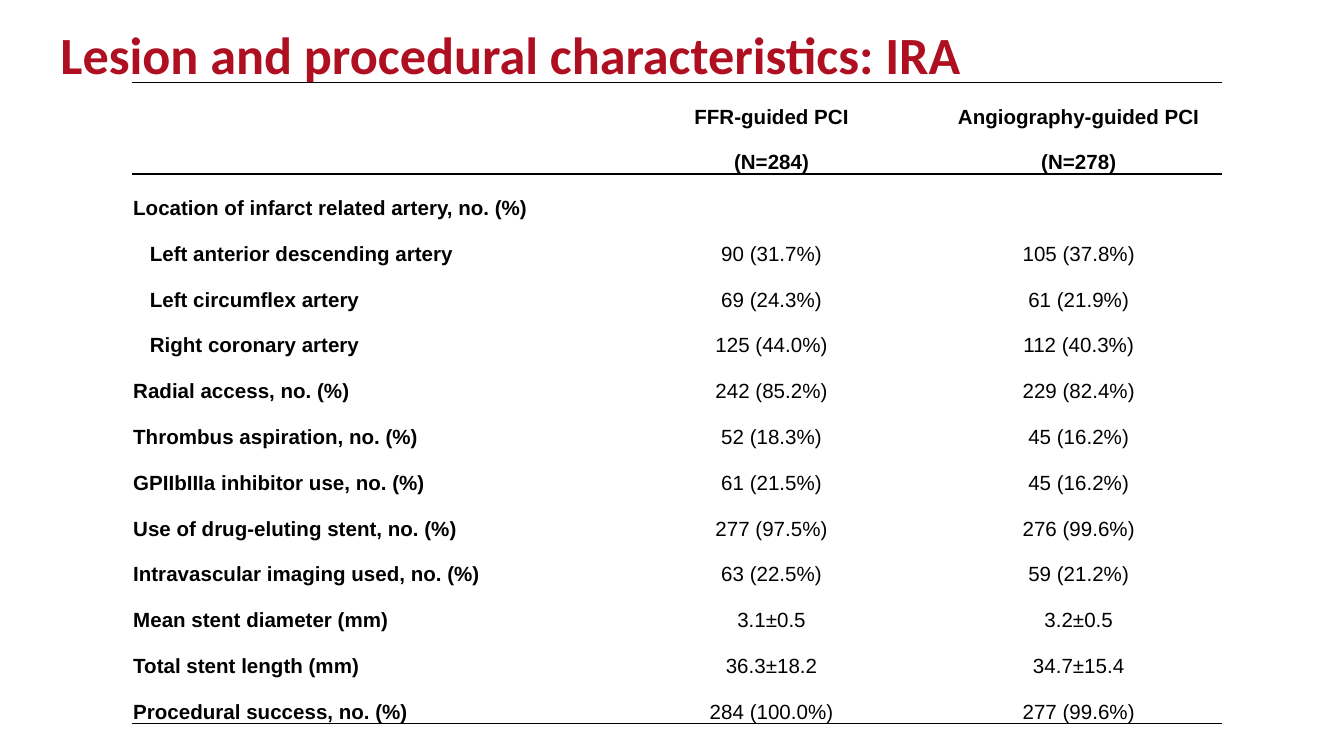
import dataclasses

import lxml.etree
import pptx
import pptx.dml.color
import pptx.enum.text
import pptx.oxml.ns
import pptx.util

Pt = pptx.util.Pt
ALIGN = pptx.enum.text.PP_ALIGN
ANCHOR = pptx.enum.text.MSO_ANCHOR


@dataclasses.dataclass(frozen=True)
class Theme:
    title_font: str = "Calibri"
    table_font: str = "Arial"
    title_size: float = 28
    table_size: float = 11
    title_color: str = "AE1022"
    text_color: str = "000000"
    rule_color: str = "000000"
    rule_width: float = 1


HEADER = ["", "FFR-guided PCI\n(N=284)", "Angiography-guided PCI\n(N=278)"]
ROWS = [
    ["Location of infarct related artery, no. (%)", "", ""],
    ["Left anterior descending artery", "90 (31.7%)", "105 (37.8%)"],
    ["Left circumflex artery", "69 (24.3%)", "61 (21.9%)"],
    ["Right coronary artery", "125 (44.0%)", "112 (40.3%)"],
    ["Radial access, no. (%)", "242 (85.2%)", "229 (82.4%)"],
    ["Thrombus aspiration, no. (%)", "52 (18.3%)", "45 (16.2%)"],
    ["GPIIbIIIa inhibitor use, no. (%)", "61 (21.5%)", "45 (16.2%)"],
    ["Use of drug-eluting stent, no. (%)", "277 (97.5%)", "276 (99.6%)"],
    ["Intravascular imaging used, no. (%)", "63 (22.5%)", "59 (21.2%)"],
    ["Mean stent diameter (mm)", "3.1±0.5", "3.2±0.5"],
    ["Total stent length (mm)", "36.3±18.2", "34.7±15.4"],
    ["Procedural success, no. (%)", "284 (100.0%)", "277 (99.6%)"],
]
COLUMN_WIDTHS = [254.9, 175.7, 153.4]
ROW_HEIGHT = 24.5


def apply_format(target, values):
    for name, value in values.items():
        setattr(target, name, value)


class SlideBuilder:
    def __init__(self, slide, theme):
        self.slide = slide
        self.theme = theme

    def set_font(self, font, name, size, color, bold):
        apply_format(font, {"name": name, "size": Pt(size), "bold": bold})
        font.color.rgb = pptx.dml.color.RGBColor.from_string(color)

    def title(self, text, left, top, width, height):
        box = self.slide.shapes.title
        apply_format(box, {"left": Pt(left), "top": Pt(top),
                           "width": Pt(width), "height": Pt(height)})
        apply_format(box.text_frame, {
            "text": text, "word_wrap": True,
            "auto_size": pptx.enum.text.MSO_AUTO_SIZE.NONE,
            "vertical_anchor": ANCHOR.BOTTOM})
        para = box.text_frame.paragraphs[0]
        apply_format(para, {"alignment": ALIGN.LEFT, "line_spacing": Pt(25)})
        theme = self.theme
        self.set_font(para.runs[0].font, theme.title_font, theme.title_size,
                      theme.title_color, True)

    def borders(self, cell, ruled_sides):
        """Rule the named sides (T, B) of a cell and clear the others."""
        properties = cell._tc.get_or_add_tcPr()
        tag = pptx.oxml.ns.qn
        for side in "LRTB":
            line = lxml.etree.SubElement(properties, tag(f"a:ln{side}"))
            if side in ruled_sides:
                line.set("w", str(Pt(self.theme.rule_width)))
                fill = lxml.etree.SubElement(line, tag("a:solidFill"))
                color = lxml.etree.SubElement(fill, tag("a:srgbClr"))
                color.set("val", self.theme.rule_color)
            else:
                lxml.etree.SubElement(line, tag("a:noFill"))

    def cell(self, cell, text, alignment, bold, indent, ruled_sides):
        self.borders(cell, ruled_sides)
        cell.fill.background()
        apply_format(cell, {
            "text": text, "vertical_anchor": ANCHOR.MIDDLE,
            "margin_left": Pt(0.75), "margin_right": Pt(0.75),
            "margin_top": 0, "margin_bottom": 0})
        theme = self.theme
        for para in cell.text_frame.paragraphs:
            if indent:
                para._p.get_or_add_pPr().set("indent", str(Pt(indent)))
            apply_format(para, {"alignment": alignment, "line_spacing": 2.0})
            for span in para.runs:
                self.set_font(span.font, theme.table_font, theme.table_size,
                              theme.text_color, bold)

    def table(self, rows, left, top, indented_rows):
        height = ROW_HEIGHT * (len(rows) + 1)
        frame = self.slide.shapes.add_table(
            len(rows), len(COLUMN_WIDTHS), Pt(left), Pt(top),
            Pt(sum(COLUMN_WIDTHS)), Pt(height))
        table = frame.table
        apply_format(table, {"first_row": False, "horz_banding": False})
        for column, width in zip(table.columns, COLUMN_WIDTHS):
            column.width = Pt(width)
        ruled = {0: "TB", 1: "T", len(rows) - 1: "B"}
        for r, texts in enumerate(rows):
            table.rows[r].height = Pt(ROW_HEIGHT * (2 if r == 0 else 1))
            for c, text in enumerate(texts):
                is_label = c == 0
                self.cell(table.cell(r, c), text,
                          ALIGN.JUSTIFY if is_label else ALIGN.CENTER,
                          is_label or r == 0,
                          8.9 if is_label and r in indented_rows else 0,
                          ruled.get(r, ""))


def main():
    deck = pptx.Presentation()
    apply_format(deck, {"slide_width": Pt(720), "slide_height": Pt(405)})
    page = deck.slides.add_slide(deck.slide_layouts[5])
    builder = SlideBuilder(page, Theme())
    builder.title("Lesion and procedural characteristics: IRA",
                  25.2, 15.1, 516.2, 33.8)
    builder.table([HEADER] + ROWS, 70.6, 44.3, indented_rows=range(2, 5))
    deck.save("out.pptx")


if __name__ == "__main__":
    main()
